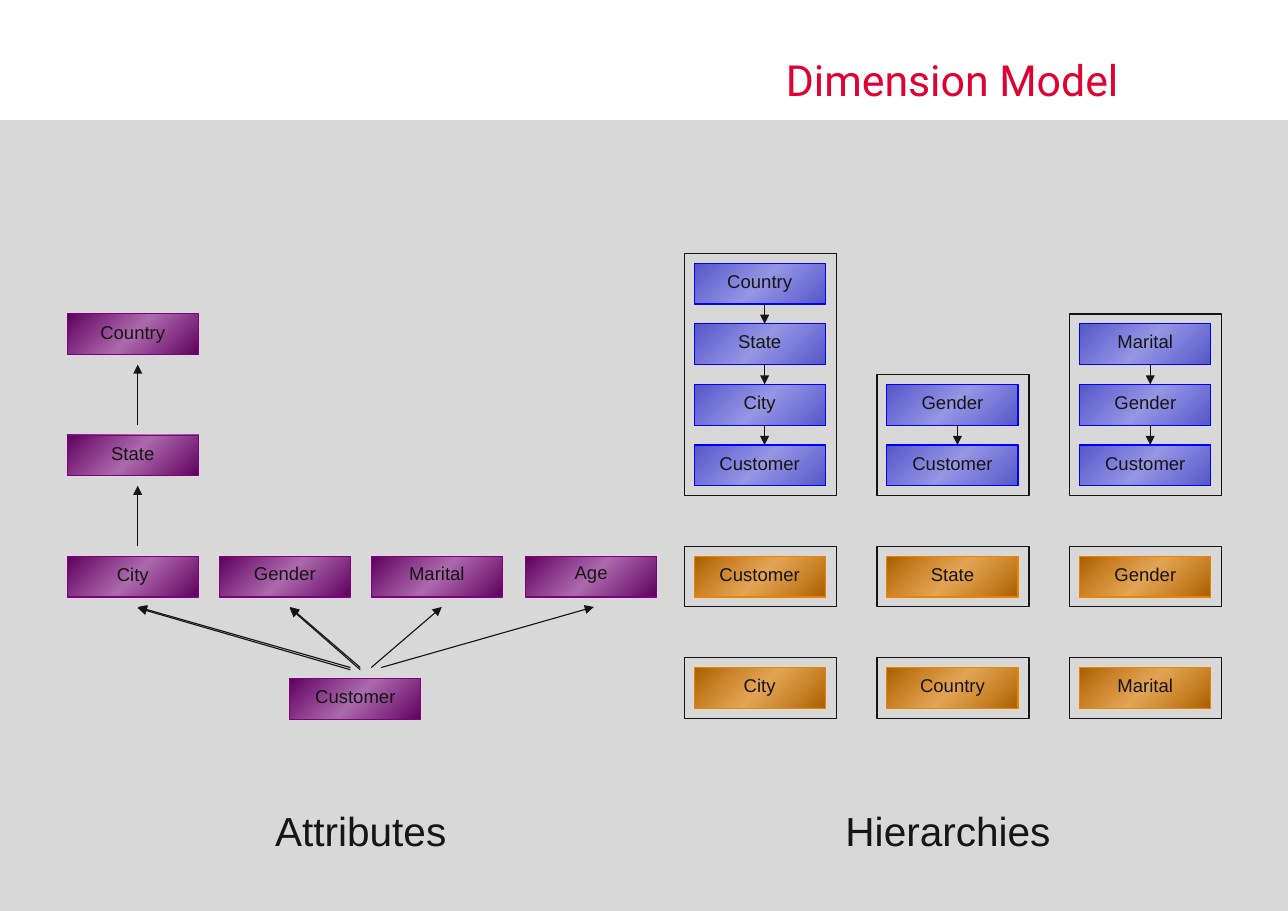
from dataclasses import dataclass

from lxml.etree import SubElement
from pptx import Presentation
from pptx.dml.color import RGBColor
from pptx.enum.shapes import MSO_CONNECTOR as Connector, MSO_SHAPE as Shape
from pptx.enum.text import MSO_ANCHOR as Anchor, PP_ALIGN as Align
from pptx.oxml.ns import qn
from pptx.util import Pt

SCALE = 9144
BOX_WIDTH, BOX_HEIGHT = 119, 37
ROW_STEP = 55
FRAME_WIDTH, FRAME_GAP, FRAME_STEP = 138, 9, 175
FRAME_LEFT = 621
ARROW_OFFSET = 64


@dataclass(frozen=True)
class Gradient:
    edge: str
    middle: str
    edge_alpha: int = 100
    middle_alpha: int = 100


@dataclass(frozen=True)
class Theme:
    ink: str = "151515"
    title: str = "E00034"
    panel: str = "D8D8D8"
    attribute: Gradient = Gradient("5C005C", "800080", 100, 50)
    drill: Gradient = Gradient("0000B6", "0000FF", 60, 30)
    single: Gradient = Gradient("A75E00", "E98300", 100, 60)
    font: str = "Arial"
    title_font: str = "Roboto"
    label_size: float = 12.1
    caption_size: float = 26.5
    title_size: float = 28
    line_width: float = 0.75


def px(*lengths):
    return [length * SCALE for length in lengths]


class SlideBuilder:
    def __init__(self, slide, theme):
        self.slide = slide
        self.theme = theme

    def add_text(self, frame, text, size, color, font, align):
        frame.word_wrap = True
        frame.vertical_anchor = Anchor.MIDDLE
        paragraph = frame.paragraphs[0]
        paragraph.alignment = align
        run = paragraph.add_run()
        run.text = text
        run.font.size = Pt(size)
        run.font.name = font
        run.font.color.rgb = RGBColor.from_string(color)

    def title(self, text, *bounds):
        shape = self.slide.shapes.title
        shape.left, shape.top, shape.width, shape.height = px(*bounds)
        theme = self.theme
        self.add_text(shape.text_frame, text, theme.title_size, theme.title,
                      theme.title_font, Align.RIGHT)

    def caption(self, text, *bounds):
        shape = self.slide.shapes.add_textbox(*px(*bounds))
        theme = self.theme
        self.add_text(shape.text_frame, text, theme.caption_size, theme.ink,
                      theme.font, Align.CENTER)

    def rectangle(self, *bounds, fill=None, line=None):
        shape = self.slide.shapes.add_shape(Shape.RECTANGLE, *px(*bounds))
        shape.shadow.inherit = False
        if fill:
            shape.fill.solid()
            shape.fill.fore_color.rgb = RGBColor.from_string(fill)
        else:
            shape.fill.background()
        if line:
            shape.line.color.rgb = RGBColor.from_string(line)
            shape.line.width = Pt(self.theme.line_width)
        else:
            shape.line.fill.background()
        return shape

    def shade(self, shape, gradient):
        shape.fill.gradient()
        fill = shape._element.spPr.find(qn("a:gradFill"))
        for child in list(fill):
            fill.remove(child)
        stops = SubElement(fill, qn("a:gsLst"))
        edge = gradient.edge, gradient.edge_alpha
        middle = gradient.middle, gradient.middle_alpha
        for position, (color, alpha) in zip((0, 50, 100), (edge, middle, edge)):
            stop = SubElement(stops, qn("a:gs"), pos=str(position * 1000))
            tint = SubElement(stop, qn("a:srgbClr"), val=color)
            if alpha < 100:
                SubElement(tint, qn("a:alpha"), val=str(alpha * 1000))
        SubElement(fill, qn("a:lin"), ang="2700000", scaled="0")

    def box(self, text, left, top, gradient, lift=5):
        shape = self.rectangle(left, top, BOX_WIDTH, BOX_HEIGHT, line=gradient.middle)
        self.shade(shape, gradient)
        frame = shape.text_frame
        frame.margin_left = frame.margin_right = frame.margin_top = 0
        frame.margin_bottom = lift * SCALE
        theme = self.theme
        self.add_text(frame, text, theme.label_size, theme.ink, theme.font, Align.CENTER)

    def arrow(self, *ends):
        connector = self.slide.shapes.add_connector(Connector.STRAIGHT, *px(*ends))
        connector.line.color.rgb = RGBColor.from_string(self.theme.ink)
        connector.line.width = Pt(self.theme.line_width)
        properties = connector._element.spPr
        SubElement(properties.find(qn("a:ln")), qn("a:tailEnd"), type="triangle")
        SubElement(properties, qn("a:effectLst"))

    def hierarchy(self, column, bottom_row, levels, gradient):
        frame_left = FRAME_LEFT + column * FRAME_STEP
        left = frame_left + FRAME_GAP
        first_row = bottom_row - (len(levels) - 1) * ROW_STEP
        for index, level in enumerate(levels):
            top = first_row + index * ROW_STEP
            self.box(level, left, top, gradient)
            if index:
                x = left + ARROW_OFFSET
                self.arrow(x, top - ROW_STEP + BOX_HEIGHT, x, top)
        self.rectangle(frame_left, first_row - FRAME_GAP, FRAME_WIDTH,
                       len(levels) * ROW_STEP, line=self.theme.ink)


def draw_attributes(builder):
    gradient = builder.theme.attribute
    builder.box("Customer", 263, 616, gradient)
    for index, name in enumerate(("City", "State", "Country")):
        top = 505 - index * 2 * ROW_STEP
        builder.box(name, 61, top, gradient)
        if index:
            builder.arrow(125, top + 2 * ROW_STEP - 9, 125, top + 46)
    for name, left, lift in (("Gender", 199, 7), ("Marital", 337, 7), ("Age", 477, 9)):
        builder.box(name, left, 505, gradient, lift)
    fan = ((318, 125), (327, 263), (337, 401), (346, 539))
    for start, end in fan:
        builder.arrow(start, 606, end, 551)
    for start, end in fan[:2]:
        builder.arrow(start, 608, end, 552)


def draw_hierarchies(builder):
    theme = builder.theme
    drill_levels = (
        ("Country", "State", "City", "Customer"),
        ("Gender", "Customer"),
        ("Marital", "Gender", "Customer"),
    )
    for column, levels in enumerate(drill_levels):
        builder.hierarchy(column, 404, levels, theme.drill)
    single_rows = {
        505: ("Customer", "State", "Gender"),
        606: ("City", "Country", "Marital"),
    }
    for row, names in single_rows.items():
        for column, name in enumerate(names):
            builder.hierarchy(column, row, (name,), theme.single)


def main():
    presentation = Presentation()
    presentation.slide_width, presentation.slide_height = px(1169, 827)
    slide = presentation.slides.add_slide(presentation.slide_layouts[5])
    builder = SlideBuilder(slide, Theme())
    builder.rectangle(0, 109, 1169, 718, fill=builder.theme.panel)
    builder.title("Dimension Model", 33, 27, 992, 91)
    draw_attributes(builder)
    draw_hierarchies(builder)
    builder.caption("Attributes", 208, 726, 239, 56)
    builder.caption("Hierarchies", 741, 726, 239, 56)
    presentation.save("out.pptx")


if __name__ == "__main__":
    main()
